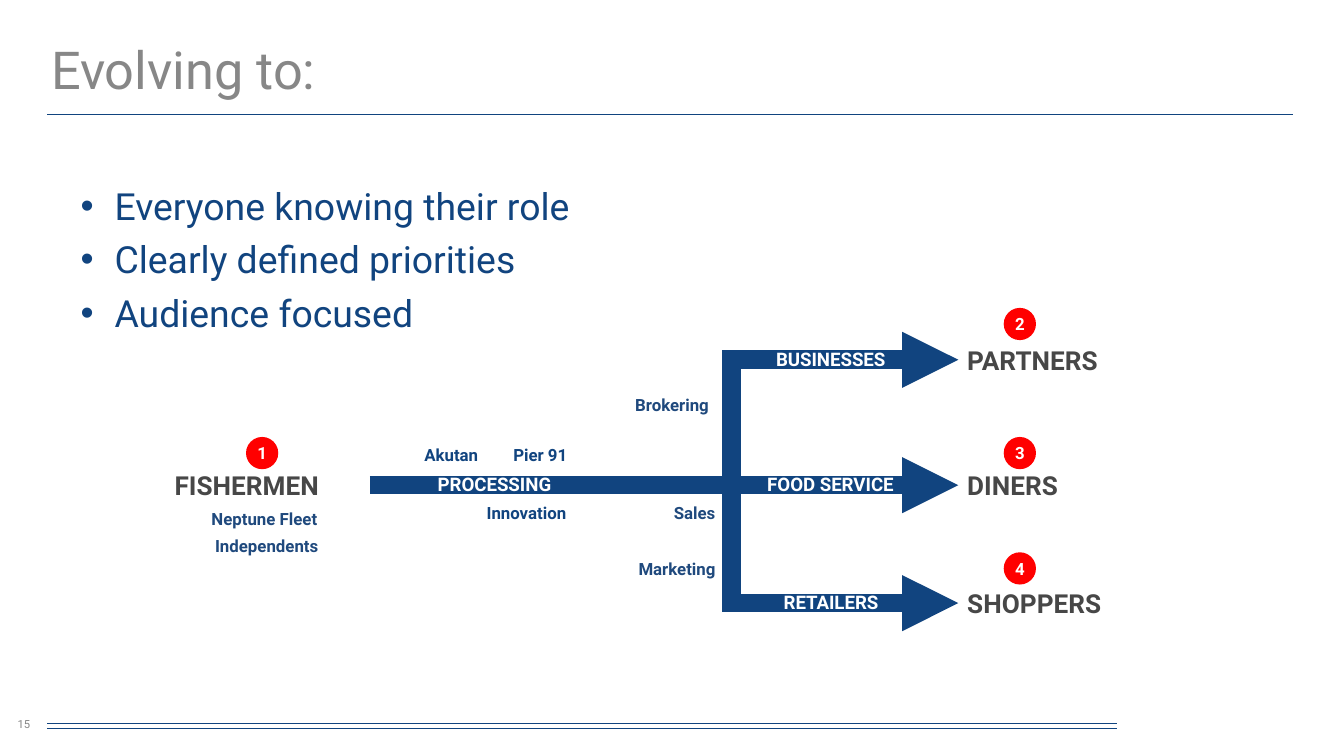
from lxml import etree
from pptx import Presentation
from pptx import util as u
from pptx.dml.color import RGBColor
from pptx.enum import shapes, text
from pptx.oxml.ns import qn

NAVY, BLUE, GRAY, DARK = "11447F", "1F497D", "878787", "474747"
WHITE, RED = "FFFFFF", "FF0000"
LEFT, CENTER, RIGHT = text.PP_ALIGN.LEFT, text.PP_ALIGN.CENTER, text.PP_ALIGN.RIGHT
LABEL_HEIGHTS = {14: 0.86, 10: 0.69, 9: 0.64, 6: 0.76}


def color(value):
    return RGBColor.from_string(value)


class SlideBuilder:
    font = "Roboto"

    def __init__(self, slide):
        self.slide = slide

    def style(self, para, size, tint, bold=False, align=LEFT):
        para.alignment = align
        para.font.name = self.font
        para.font.size = u.Pt(size)
        para.font.bold = bold
        para.font.color.rgb = color(tint)

    def place(self, shape, left, top, width, height):
        shape.left, shape.top = u.Cm(left), u.Cm(top)
        shape.width, shape.height = u.Cm(width), u.Cm(height)

    def title(self, words, *area):
        box = self.slide.shapes.title
        self.place(box, *area)
        frame = box.text_frame
        frame.text = words
        frame.auto_size = text.MSO_AUTO_SIZE.NONE
        frame.vertical_anchor = text.MSO_ANCHOR.MIDDLE
        frame.paragraphs[0].line_spacing = 0.9
        self.style(frame.paragraphs[0], 28, GRAY)

    def bullets(self, items, *area):
        box = self.slide.placeholders[1]
        self.place(box, *area)
        frame = box.text_frame
        frame.text = "\n".join(items)
        frame.auto_size = text.MSO_AUTO_SIZE.NONE
        for index, para in enumerate(frame.paragraphs):
            props = para._p.get_or_add_pPr()
            props.set("marL", str(u.Cm(0.64)))
            props.set("indent", str(u.Cm(-0.64)))
            etree.SubElement(props, qn("a:buFont"), typeface="Arial")
            etree.SubElement(props, qn("a:buChar"), char="•")
            para.space_before = u.Pt(4.7 if index else 0)
            self.style(para, 20, NAVY)

    def line(self, x1, y1, x2, y2, width=0.25, arrow=False, square=False):
        line = self.slide.shapes.add_connector(
            shapes.MSO_CONNECTOR.STRAIGHT, u.Cm(x1), u.Cm(y1), u.Cm(x2), u.Cm(y2))
        line.line.width = u.Pt(width)
        line.line.color.rgb = color(NAVY)
        outline = line.line._get_or_add_ln()
        if square:
            outline.set("cap", "sq")
        if arrow:
            etree.SubElement(outline, qn("a:tailEnd"), type="triangle")
        etree.SubElement(line._element.spPr, qn("a:effectLst"))

    def label(self, words, left, top, width, size, tint, align=LEFT, bold=True):
        box = self.slide.shapes.add_textbox(
            u.Cm(left), u.Cm(top), u.Cm(width), u.Cm(LABEL_HEIGHTS[size]))
        frame = box.text_frame
        frame.word_wrap = True
        frame.text = words
        self.style(frame.paragraphs[0], size, tint, bold, align)
        return box

    def badge(self, number, left, top):
        """Draw a red circle holding a step number."""
        circle = self.slide.shapes.add_shape(
            shapes.MSO_SHAPE.OVAL, u.Cm(left), u.Cm(top), u.Cm(0.61), u.Cm(0.61))
        circle.shadow.inherit = False
        circle.fill.solid()
        circle.fill.fore_color.rgb = color(RED)
        circle.line.fill.background()
        frame = circle.text_frame
        frame.margin_left = frame.margin_right = 0
        frame.margin_top = frame.margin_bottom = 0
        frame.word_wrap = False
        frame.vertical_anchor = text.MSO_ANCHOR.MIDDLE
        frame.text = str(number)
        self.style(frame.paragraphs[0], 9, WHITE, True, CENTER)


def main():
    deck = Presentation()
    deck.slide_width, deck.slide_height = u.Cm(25.4), u.Cm(14.29)
    page = SlideBuilder(deck.slides.add_slide(deck.slide_layouts[1]))

    page.title("Evolving to:", 0.71, 0.58, 22.56, 1.57)
    page.bullets(["Everyone knowing their role", "Clearly defined priorities",
                  "Audience focused"], 1.27, 3.33, 14.81, 7.26)
    page.line(0.89, 2.16, 24.43, 2.16)
    for y in (13.67, 13.77):
        page.line(0.89, y, 21.11, y)
    number = page.label("15", 0, 13.31, 0.91, 6, GRAY, CENTER, bold=False)
    number.text_frame.margin_left = number.text_frame.margin_right = 0
    number.text_frame.vertical_anchor = text.MSO_ANCHOR.MIDDLE

    spine, tip = 13.82, 18.11
    branches = (6.8, 9.17, 11.4)
    for start, y in zip((spine, 6.99, spine), branches):
        page.line(start, y, tip, y, width=10, arrow=True)
    page.line(spine, branches[0], spine, branches[-1], width=10, square=True)

    for words, left, top, width in (
            ("PROCESSING", 7.29, 8.81, 4.11), ("BUSINESSES", 13.67, 6.45, 4.06),
            ("FOOD SERVICE", 13.79, 8.81, 3.81), ("RETAILERS", 14.22, 11.05, 2.97)):
        page.label(words, left, top, width, 10, WHITE, CENTER)

    for words, left, top in (
            ("FISHERMEN", 3.05, 8.74), ("PARTNERS", 18.03, 6.38),
            ("DINERS", 18.03, 8.74), ("SHOPPERS", 18.03, 10.97)):
        page.label(words, left, top, 4.4, 14, DARK)

    for words, left, top, width, tint, align in (
            ("Akutan", 7.77, 8.28, 2.77, NAVY, LEFT),
            ("Pier 91", 8.2, 8.28, 2.77, NAVY, RIGHT),
            ("Innovation", 8.66, 9.37, 2.29, NAVY, RIGHT),
            ("Neptune Fleet", 3.23, 9.5, 3.53, BLUE, CENTER),
            ("Independents", 3.07, 10.01, 3.94, BLUE, CENTER),
            ("Brokering", 11.66, 7.34, 2.08, BLUE, CENTER),
            ("Sales", 12.27, 9.37, 1.5, BLUE, RIGHT),
            ("Marketing", 11.57, 10.44, 2.2, BLUE, RIGHT)):
        page.label(words, left, top, width, 9, tint, align)

    badges = ((4.65, 8.26), (18.97, 5.82), (18.97, 8.26), (18.97, 10.44))
    for step, (left, top) in enumerate(badges, start=1):
        page.badge(step, left, top)

    deck.save("out.pptx")


if __name__ == "__main__":
    main()
